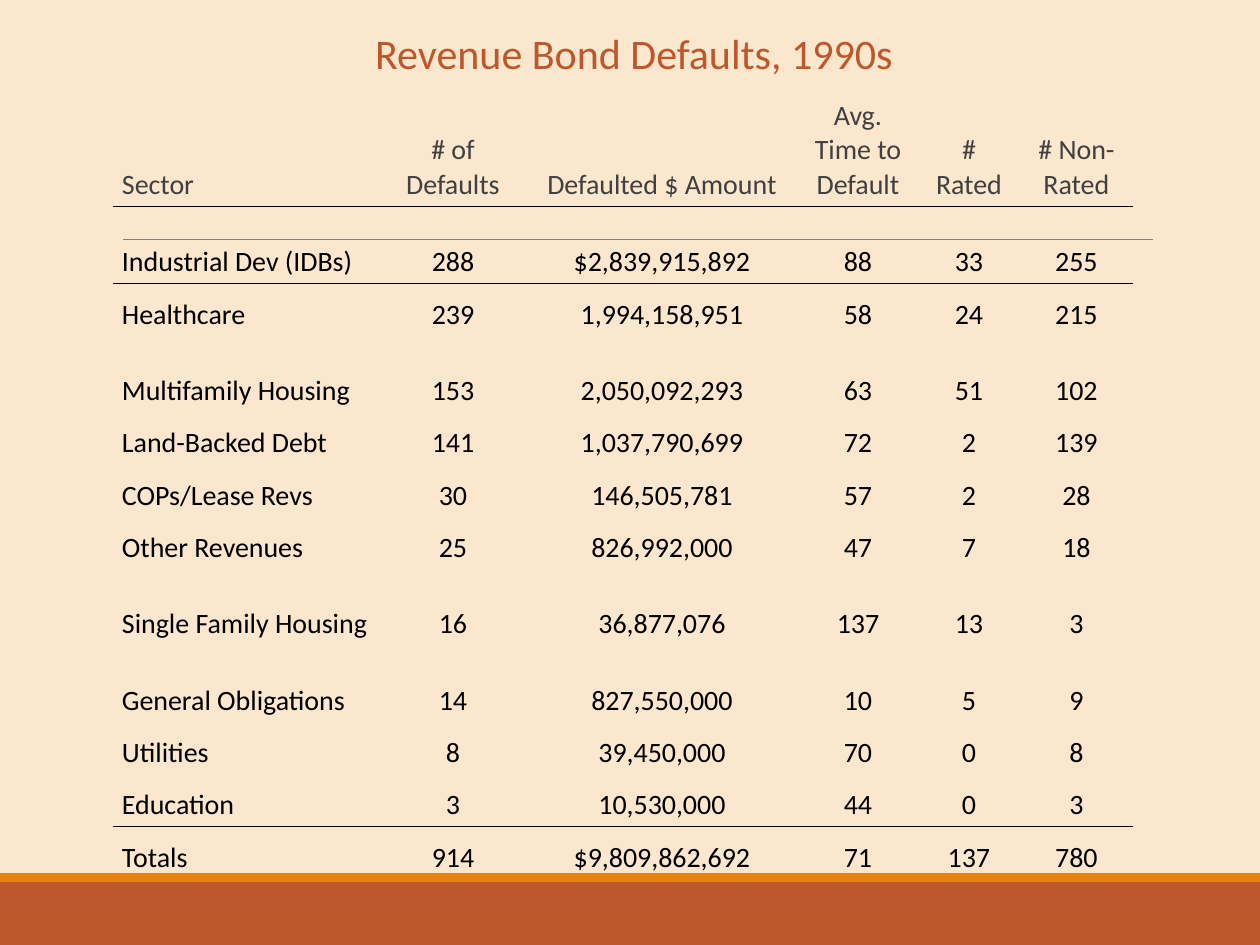
from dataclasses import dataclass

from lxml import etree
from pptx import Presentation
from pptx import util as u
from pptx.dml import color
from pptx.enum import shapes, text
from pptx.oxml import ns

SCALE = 914400 / 126
NO_GRID = "{2D5ABB26-0587-4C30-8999-92F81FD0307C}"


@dataclass(frozen=True)
class Theme:
    font: str = "Calibri"
    paper: str = "FBE6CE"
    rust: str = "BD582C"
    amber: str = "E48312"
    grey: str = "808080"
    head: str = "404040"
    ink: str = "000000"
    title: int = 24
    body: int = 16


def px(n):
    return u.Emu(round(n * SCALE))


def rgb(code):
    return color.RGBColor.from_string(code)


def put(item, vals):
    for key, val in vals.items():
        setattr(item, key, val)


class Deck:
    def __init__(self, theme, wide, high):
        self.theme = theme
        self.prs = Presentation()
        put(self.prs, {"slide_width": px(wide), "slide_height": px(high)})
        self.slide = self.prs.slides.add_slide(self.prs.slide_layouts[5])
        fill = self.slide.background.fill
        fill.solid()
        fill.fore_color.rgb = rgb(theme.paper)

    def label(self, frame, words, size, ink, align):
        para = frame.paragraphs[0]
        para.alignment = align
        run = para.add_run()
        run.text = words
        put(run.font, {"name": self.theme.font, "size": u.Pt(size)})
        run.font.color.rgb = rgb(ink)
        return para

    def title(self, words, left, top, wide, high):
        box = self.slide.shapes.title
        put(box, {"left": px(left), "top": px(top), "width": px(wide), "height": px(high)})
        put(box.text_frame, {
            "word_wrap": True,
            "auto_size": text.MSO_AUTO_SIZE.NONE,
            "vertical_anchor": text.MSO_ANCHOR.TOP,
        })
        para = self.label(box.text_frame, words, self.theme.title, self.theme.rust,
                          text.PP_ALIGN.CENTER)
        para.line_spacing = 0.8

    def band(self, left, top, wide, high, paint):
        bar = self.slide.shapes.add_shape(
            shapes.MSO_SHAPE.RECTANGLE, px(left), px(top), px(wide), px(high))
        bar.shadow.inherit = False
        bar.fill.solid()
        bar.fill.fore_color.rgb = rgb(paint)
        bar.line.fill.background()

    def rule(self, left, right, top):
        line = self.slide.shapes.add_connector(
            shapes.MSO_CONNECTOR.STRAIGHT, px(left), px(top), px(right), px(top))
        line.line.width = u.Pt(0.5)
        line.line.color.rgb = rgb(self.theme.grey)
        etree.SubElement(line._element.spPr, ns.qn("a:effectLst"))

    def edge(self, cell, side):
        line = etree.Element(ns.qn(f"a:{side}"), w=str(u.Pt(1)))
        fill = etree.SubElement(line, ns.qn("a:solidFill"))
        etree.SubElement(fill, ns.qn("a:srgbClr"), val=self.theme.ink)
        cell._tc.get_or_add_tcPr().insert(0, line)

    def table(self, left, top, cols, rows, data, edges):
        grid = self.slide.shapes.add_table(
            len(rows), len(cols), px(left), px(top), px(sum(cols)), px(sum(rows))).table
        put(grid, {"first_row": False, "horz_banding": False})
        grid._tbl.tblPr.find(ns.qn("a:tableStyleId")).text = NO_GRID
        for col, wide in zip(grid.columns, cols):
            col.width = px(wide)
        for r, (row, high) in enumerate(zip(grid.rows, rows)):
            row.height = px(high)
            ink = self.theme.ink if r else self.theme.head
            for c, cell in enumerate(row.cells):
                put(cell, {
                    "margin_left": px(9), "margin_right": px(9),
                    "margin_top": px(5), "margin_bottom": px(5),
                    "vertical_anchor": text.MSO_ANCHOR.BOTTOM,
                })
                cell.fill.background()
                align = text.PP_ALIGN.CENTER if c else text.PP_ALIGN.LEFT
                self.label(cell.text_frame, data[r][c], self.theme.body, ink, align)
                if r in edges:
                    self.edge(cell, edges[r])

    def save(self):
        self.prs.save("out.pptx")


DATA = [
    ("Sector", "# of Defaults", "Defaulted $ Amount", "Avg. Time to Default", "# Rated", "# Non-Rated"),
    ("Industrial Dev (IDBs)", "288", "$2,839,915,892", "88", "33", "255"),
    ("Healthcare", "239", "1,994,158,951", "58", "24", "215"),
    ("Multifamily Housing", "153", "2,050,092,293", "63", "51", "102"),
    ("Land-Backed Debt", "141", "1,037,790,699", "72", "2", "139"),
    ("COPs/Lease Revs", "30", "146,505,781", "57", "2", "28"),
    ("Other Revenues", "25", "826,992,000", "47", "7", "18"),
    ("Single Family Housing", "16", "36,877,076", "137", "13", "3"),
    ("General Obligations", "14", "827,550,000", "10", "5", "9"),
    ("Utilities", "8", "39,450,000", "70", "0", "8"),
    ("Education", "3", "10,530,000", "44", "0", "3"),
    ("Totals", "914", "$9,809,862,692", "71", "137", "780"),
]
COLS = [267, 146, 272, 120, 102, 113]
ROWS = [112, 77, 53, 76, 52, 53, 52, 76, 77, 52, 52, 53]
EDGES = {0: "lnB", 1: "lnT", 10: "lnB", 11: "lnT"}


def main():
    theme = Theme()
    deck = Deck(theme, 1260, 945)
    deck.band(0, 882, 1260, 63, theme.rust)
    deck.band(0, 873, 1260, 9, theme.amber)
    deck.rule(123, 1153, 239)
    deck.title("Revenue Bond Defaults, 1990s", 315, 31, 638, 71)
    deck.table(113, 94, COLS, ROWS, DATA, EDGES)
    deck.save()


if __name__ == "__main__":
    main()
